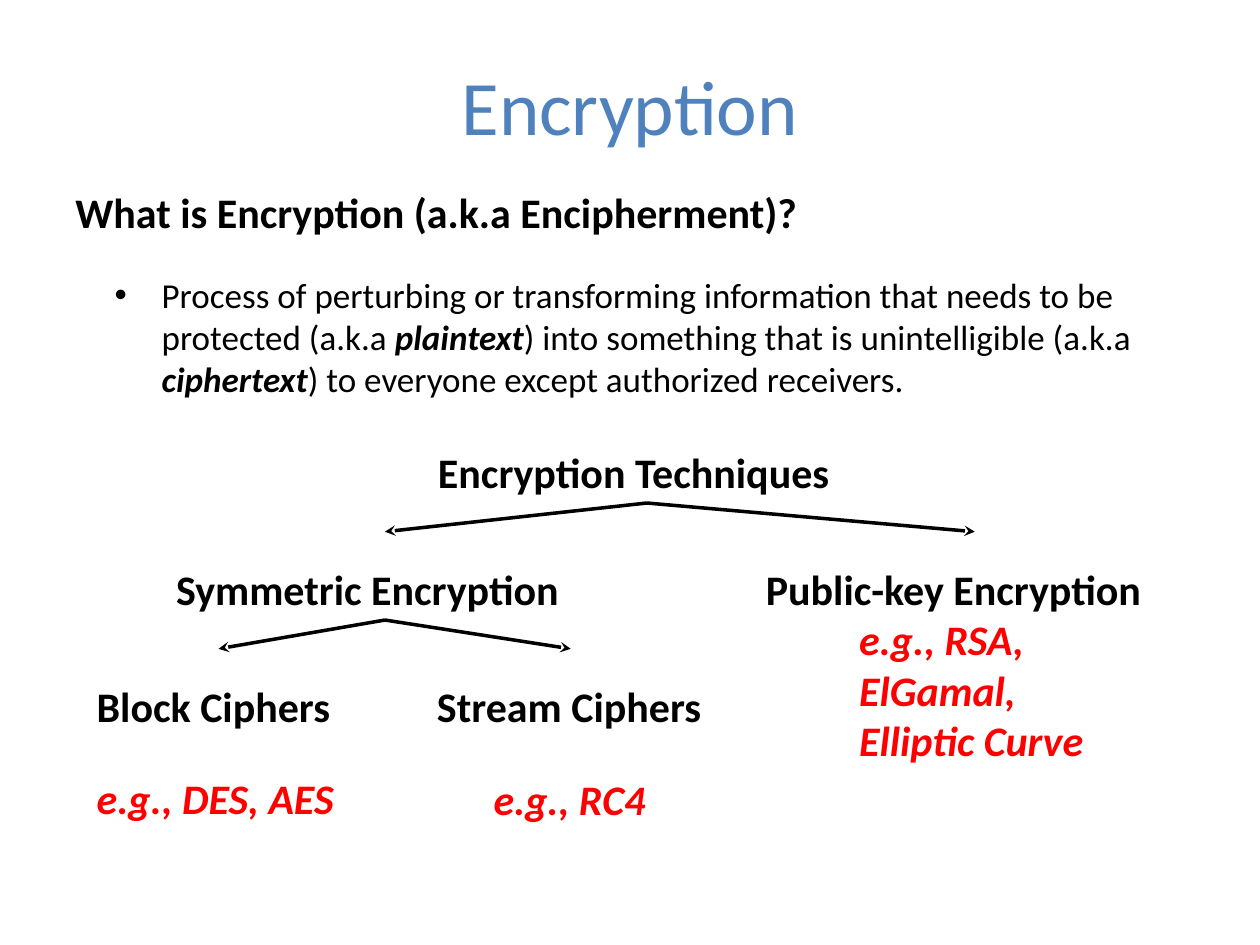
from collections import namedtuple

from lxml import etree
from pptx import Presentation
from pptx.dml.color import RGBColor
from pptx.enum import shapes, text
from pptx.oxml import ns
from pptx.util import Cm, Pt

BLACK = RGBColor(0x00, 0x00, 0x00)
BLUE = RGBColor(0x4F, 0x81, 0xBD)
RED = RGBColor(0xFF, 0x00, 0x00)
FONT = "Calibri"
TOP, BOTTOM = 0, 2

Box = namedtuple("Box", "left top width height")


def inside(box, left, top, width, height):
    return Box(box.left + left, box.top + top, width, height)


def add_text(slide, box, runs, size=24, color=BLACK, bold=True, italic=False,
             anchor=text.MSO_ANCHOR.BOTTOM, align=text.PP_ALIGN.LEFT,
             wrap=True, bullet=False):
    label = slide.shapes.add_textbox(*map(Cm, box))
    frame = label.text_frame
    frame.word_wrap = wrap
    frame.vertical_anchor = anchor
    paragraph = frame.paragraphs[0]
    paragraph.alignment = align
    if bullet:
        props = paragraph._p.get_or_add_pPr()
        indent = Cm(0.95)
        props.set("marL", str(indent))
        props.set("indent", str(-indent))
        etree.SubElement(props, ns.qn("a:buFont"), typeface="Arial")
        etree.SubElement(props, ns.qn("a:buChar"), char="•")
    if isinstance(runs, str):
        runs = [(runs, False)]
    for words, emphasis in runs:
        run = paragraph.add_run()
        run.text = words
        font = run.font
        font.name = FONT
        font.size = Pt(size)
        font.color.rgb = color
        font.bold = bold or emphasis
        font.italic = italic or emphasis
    return label


def add_branch(slide, parent, child):
    branch = slide.shapes.add_connector(shapes.MSO_CONNECTOR.STRAIGHT, 0, 0, 0, 0)
    branch.begin_connect(parent, BOTTOM)
    branch.end_connect(child, TOP)
    branch.line.color.rgb = BLACK
    branch.line.width = Pt(2)
    etree.SubElement(branch.line._get_or_add_ln(), ns.qn("a:tailEnd"), type="stealth")
    etree.SubElement(branch._element.spPr, ns.qn("a:effectLst"))


def add_header(slide, box):
    add_text(slide, inside(box, 0, 0, box.width, 4.24), "Encryption", size=44,
             color=BLUE, bold=False, anchor=text.MSO_ANCHOR.MIDDLE,
             align=text.PP_ALIGN.CENTER)
    add_text(slide, inside(box, 0, 3.12, 16.23, 1.78),
             "What is Encryption (a.k.a Encipherment)?")


def add_definition(slide, box):
    add_text(slide, box, [
        ("Process of perturbing or transforming information that needs to be "
         "protected (a.k.a ", False),
        ("plaintext", True),
        (") into something that is unintelligible (a.k.a ", False),
        ("ciphertext", True),
        (") to everyone except authorized receivers.", False),
    ], size=20, bold=False, anchor=text.MSO_ANCHOR.TOP, bullet=True)


def add_techniques(slide, box):
    level, height, wide, narrow = 2.36, 1.78, 8.92, 5.41

    def node(words, left, depth, width):
        return add_text(slide, inside(box, left, depth * level, width, height), words)

    def example(words, left, top, width, height, **style):
        add_text(slide, inside(box, left, top, width, height), words,
                 color=RED, italic=True, **style)

    techniques = node("Encryption Techniques", 6.88, 0, wide)
    symmetric = node("Symmetric Encryption", 1.6, 1, wide)
    public_key = node("Public-key Encryption", 13.49, 1, wide)
    block = node("Block Ciphers", 0, 2, narrow)
    stream = node("Stream Ciphers", 6.86, 2, 5.89)

    example("e.g., DES, AES", 0, 6.58, narrow, height)
    example("e.g., RC4", 8, 7.11, 3.61, 1.27, wrap=False,
            anchor=text.MSO_ANCHOR.TOP)
    example("e.g., RSA, ElGamal, Elliptic Curve", 15.37, 3.76, narrow, 3.43)

    for parent, child in [(techniques, symmetric), (techniques, public_key),
                          (symmetric, block), (symmetric, stream)]:
        add_branch(slide, parent, child)


def main():
    deck = Presentation()
    deck.slide_width, deck.slide_height = Cm(25.4), Cm(19.05)
    slide = deck.slides.add_slide(deck.slide_layouts[6])
    add_header(slide, Box(1.27, 0, 22.86, 4.9))
    add_definition(slide, Box(2.06, 5.38, 22.02, 3))
    add_techniques(slide, Box(1.7, 8.36, 22.41, 8.38))
    deck.save("out.pptx")


if __name__ == "__main__":
    main()
